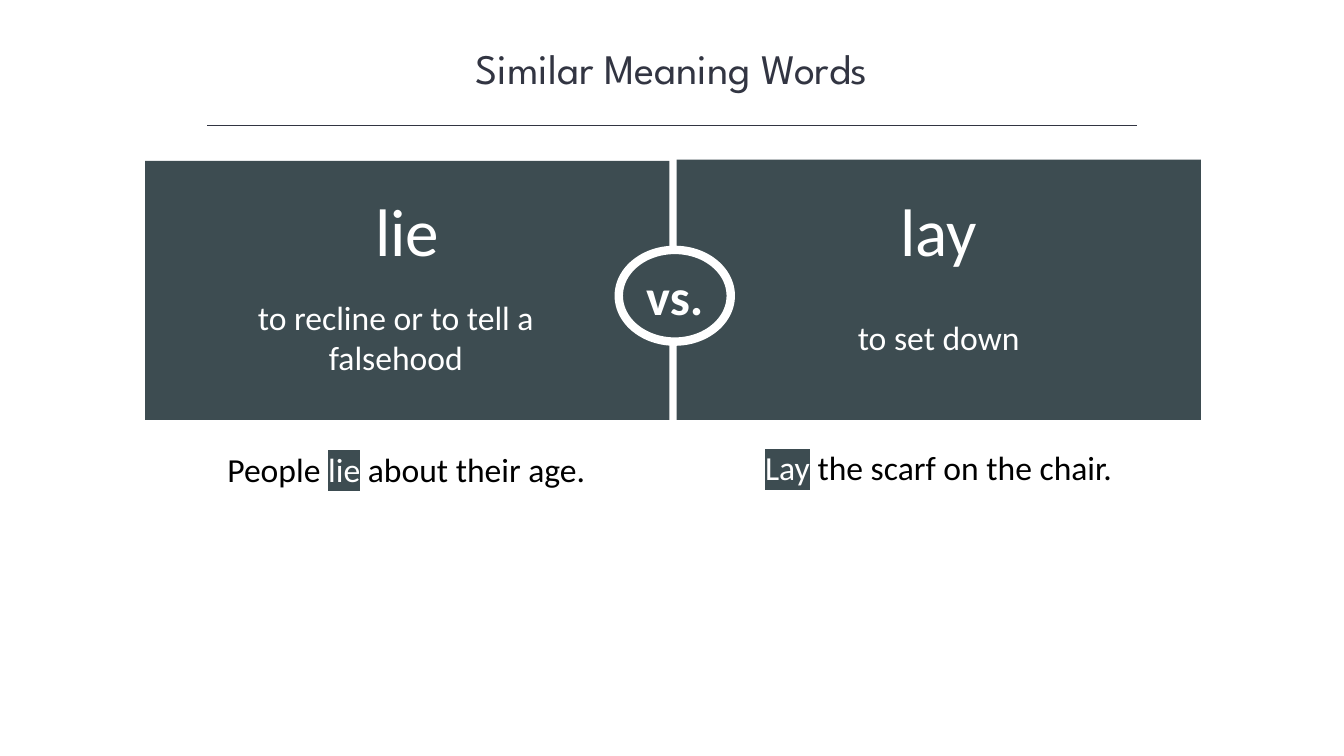
from dataclasses import dataclass

from lxml import etree
from pptx import Presentation
from pptx.dml.color import RGBColor
from pptx.enum import shapes, text
from pptx.oxml import ns
from pptx.util import Pt


@dataclass(frozen=True)
class Theme:
    slate: str = "3D4C51"
    ink: str = "323542"
    white: str = "FFFFFF"
    black: str = "000000"
    heading_font: str = "League Spartan"
    body_font: str = "Calibri"
    heading_size: int = 30
    word_size: int = 48
    versus_size: int = 36
    body_size: int = 24


theme = Theme()
rgb = RGBColor.from_string


def style_run(run, size, color, font=theme.body_font, bold=False):
    run.font.name = font
    run.font.size = Pt(size)
    run.font.bold = bold
    run.font.color.rgb = rgb(color)


def add_label(box, pieces, size, wrap=True, anchor=text.MSO_ANCHOR.TOP, font=theme.body_font):
    """Add a centred text box from (wording, colour) pieces and return its runs."""
    frame = slide.shapes.add_textbox(*map(Pt, box)).text_frame
    frame.word_wrap = wrap
    frame.auto_size = text.MSO_AUTO_SIZE.SHAPE_TO_FIT_TEXT
    frame.vertical_anchor = anchor
    line = frame.paragraphs[0]
    line.alignment = text.PP_ALIGN.CENTER
    for wording, color in pieces:
        run = line.add_run()
        run.text = wording
        style_run(run, size, color, font)
    return line.runs


prs = Presentation()
prs.slide_width, prs.slide_height = Pt(960), Pt(540)
slide = prs.slides.add_slide(prs.slide_layouts[6])

# Heading and rule
add_label((120, 26.5, 720, 44), [("Similar Meaning Words", theme.ink)],
          theme.heading_size, font=theme.heading_font)
rule = slide.shapes.add_connector(shapes.MSO_CONNECTOR.STRAIGHT, Pt(148), Pt(89.5), Pt(812), Pt(89.5))
rule.line.color.rgb = rgb(theme.ink)
rule.line.width = Pt(1)
etree.SubElement(rule._element.spPr, ns.qn("a:effectLst"))

# Two panels, both ending on the same baseline
panel_bottom = 300
for left, top in ((103.75, 115), (483.25, 114)):
    panel = slide.shapes.add_shape(shapes.MSO_SHAPE.RECTANGLE, Pt(left), Pt(top),
                                   Pt(374.5), Pt(panel_bottom - top))
    panel.shadow.inherit = False
    panel.fill.solid()
    panel.fill.fore_color.rgb = rgb(theme.slate)
    panel.line.fill.background()

# Badge between the panels
versus = slide.shapes.add_shape(shapes.MSO_SHAPE.OVAL, Pt(442), Pt(178.5), Pt(80), Pt(65.5))
versus.shadow.inherit = False
versus.fill.solid()
versus.fill.fore_color.rgb = rgb(theme.slate)
versus.line.color.rgb = rgb(theme.white)
versus.line.width = Pt(6)
versus.text_frame.text = "vs."
versus.text_frame.word_wrap = False
versus.text_frame.vertical_anchor = text.MSO_ANCHOR.MIDDLE
versus_line = versus.text_frame.paragraphs[0]
versus_line.alignment = text.PP_ALIGN.CENTER
style_run(versus_line.runs[0], theme.versus_size, theme.white, bold=True)

# Word, meaning and example of each side
entries = [
    ("lie", (260.5, 132, 61, 65.5),
     "to recline or to tell a falsehood", (132, 208, 301.5, 65.5),
     ("People ", "lie", " about their age."), (103.75, 317, 373, 36)),
    ("lay", (635.5, 132, 70, 65.5),
     "to set down", (553, 222.5, 235, 36),
     ("", "Lay", " the scarf on the chair."), (483.25, 316, 374.5, 36)),
]
for word, word_box, meaning, meaning_box, example, example_box in entries:
    add_label(word_box, [(word, theme.white)], theme.word_size, wrap=False)
    add_label(meaning_box, [(meaning, theme.white)], theme.body_size, anchor=text.MSO_ANCHOR.MIDDLE)

    before, key, after = example
    pieces = [(before, theme.black), (key, theme.white), (after, theme.black)]
    for run in add_label(example_box, [piece for piece in pieces if piece[0]], theme.body_size):
        if run.text == key:
            highlight = etree.Element(ns.qn("a:highlight"))
            etree.SubElement(highlight, ns.qn("a:srgbClr"), val=theme.slate)
            run.font._element.find(ns.qn("a:solidFill")).addnext(highlight)

prs.save("out.pptx")
